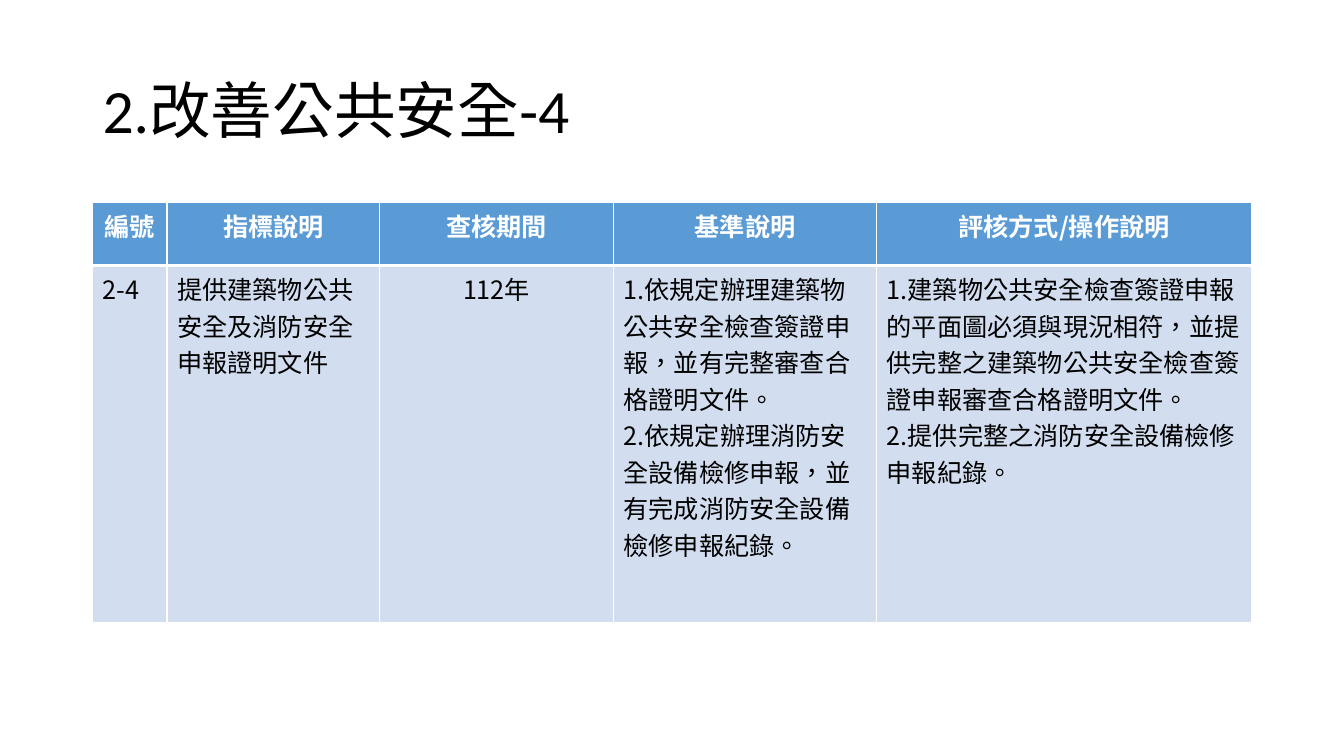
"""Build the public safety indicator slide with its table."""
from dataclasses import dataclass

from lxml import etree
from pptx import Presentation
from pptx.dml.color import RGBColor
from pptx.enum.text import MSO_ANCHOR, MSO_AUTO_SIZE, PP_ALIGN
from pptx.oxml.ns import qn
from pptx.util import Cm, Pt

LEFT, CENTER = PP_ALIGN.LEFT, PP_ALIGN.CENTER
MIDDLE, NO_FIT = MSO_ANCHOR.MIDDLE, MSO_AUTO_SIZE.NONE
TITLE_ONLY = 5


@dataclass(frozen=True)
class Theme:
    ink: str = "000000"
    paper: str = "FFFFFF"
    header: str = "5B9BD5"
    body: str = "D2DEEF"
    latin: str = "Calibri"
    cjk: str = "Noto Sans CJK SC"
    title_size: int = 44
    table_size: int = 18
    thin: int = 1
    thick: int = 3


class SlideBuilder:
    def __init__(self, s, theme):
        self.s, self.theme = s, theme

    def add_text(self, p, text, font, size, color, bold=False, align=LEFT):
        p.alignment = align
        r = p.add_run()
        r.text = text
        for name, value in {"name": font, "size": Pt(size), "bold": bold}.items():
            setattr(r.font, name, value)
        r.font.color.rgb = RGBColor.from_string(color)
        rPr = r._r.get_or_add_rPr()
        rPr.set("lang", "zh-TW")
        latin = rPr.find(qn("a:latin"))
        ea = etree.Element(qn("a:ea"), typeface=self.theme.cjk)
        latin.addnext(ea)

    def title(self, text, box):
        sp, t = self.s.shapes.title, self.theme
        for name, value in zip(("left", "top", "width", "height"), box):
            setattr(sp, name, Cm(value))
        tf = sp.text_frame
        for name, value in {"vertical_anchor": MIDDLE, "auto_size": NO_FIT,
                            "word_wrap": True}.items():
            setattr(tf, name, value)
        p = tf.paragraphs[0]
        p.line_spacing = 0.9
        self.add_text(p, text, t.latin, t.title_size, t.ink)

    def borders(self, cell, widths):
        tcPr = cell._tc.get_or_add_tcPr()
        for side, width in widths.items():
            ln = etree.SubElement(tcPr, qn(f"a:ln{side}"), w=str(Pt(width)))
            fill = etree.SubElement(ln, qn("a:solidFill"))
            etree.SubElement(fill, qn("a:srgbClr"), val=self.theme.paper)

    def cell(self, cell, text, is_header, align):
        t = self.theme
        joint = "B" if is_header else "T"
        self.borders(cell, {**dict.fromkeys("LRTB", t.thin), joint: t.thick})
        cell.fill.solid()
        cell.fill.fore_color.rgb = RGBColor.from_string(t.header if is_header else t.body)
        tf = cell.text_frame
        for i, line in enumerate(text.split("\n")):
            p = tf.add_paragraph() if i else tf.paragraphs[0]
            self.add_text(p, line, t.cjk, t.table_size,
                          t.paper if is_header else t.ink, is_header, align)

    def table(self, rows, left, top, widths, heights, centered):
        frame = self.s.shapes.add_table(len(rows), len(widths), Cm(left), Cm(top),
                                        Cm(sum(widths)), Cm(sum(heights)))
        table = frame.table
        for column, width in zip(table.columns, widths):
            column.width = Cm(width)
        for i, (row, height) in enumerate(zip(rows, heights)):
            table.rows[i].height = Cm(height)
            for j, text in enumerate(row):
                align = CENTER if i == 0 or j in centered else LEFT
                self.cell(table.cell(i, j), text, i == 0, align)


ROWS = [
    ["編號", "指標說明", "查核期間", "基準說明", "評核方式/操作說明"],
    ["2-4",
     "提供建築物公共安全及消防安全申報證明文件",
     "112年",
     "1.依規定辦理建築物公共安全檢查簽證申報，並有完整審查合格證明文件。\n"
     "2.依規定辦理消防安全設備檢修申報，並有完成消防安全設備檢修申報紀錄。",
     "1.建築物公共安全檢查簽證申報的平面圖必須與現況相符，"
     "並提供完整之建築物公共安全檢查簽證申報審查合格證明文件。\n"
     "2.提供完整之消防安全設備檢修申報紀錄。"],
]


def main():
    prs = Presentation()
    prs.slide_width, prs.slide_height = Cm(33.87), Cm(19.05)
    s = prs.slides.add_slide(prs.slide_layouts[TITLE_ONLY])
    builder = SlideBuilder(s, Theme())
    builder.title("2.改善公共安全-4", (2.33, 1.01, 29.21, 3.68))
    builder.table(ROWS, 2.33, 5.09, widths=[1.88, 5.36, 5.89, 6.63, 9.45],
                  heights=[1.6, 8.99], centered={2})
    prs.save("out.pptx")


if __name__ == "__main__":
    main()
